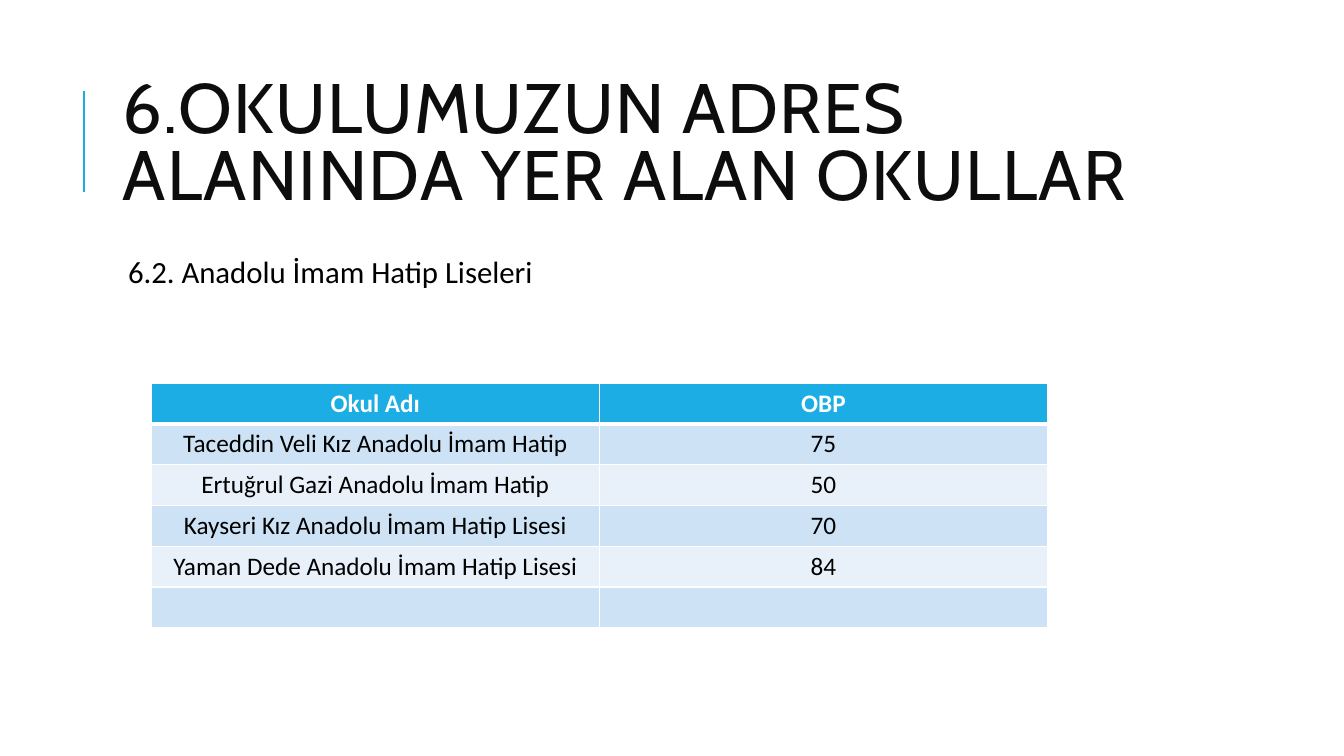
from lxml.etree import SubElement
from pptx import Presentation
from pptx.dml.color import RGBColor
from pptx.enum.shapes import MSO_CONNECTOR
from pptx.enum.text import MSO_ANCHOR, PP_ALIGN
from pptx.oxml.ns import qn
from pptx.util import Inches, Pt

COLORS = {
    "accent": "1CADE4",
    "title": "0D0D0D",
    "text": "000000",
    "white": "FFFFFF",
    "band_dark": "CDE3F5",
    "band_light": "E8F1FA",
}
SCHOOLS = [
    ("Okul Adı", "OBP"),
    ("Taceddin Veli Kız Anadolu İmam Hatip", "75"),
    ("Ertuğrul Gazi Anadolu İmam Hatip", "50"),
    ("Kayseri Kız Anadolu İmam Hatip Lisesi", "70"),
    ("Yaman Dede Anadolu İmam Hatip Lisesi", "84"),
    ("", ""),
]
TEXT_LEFT, TEXT_WIDTH = Inches(1.12), Inches(10.63)


def add_run(paragraph, text, font_name, size, color, bold=False):
    run = paragraph.add_run()
    run.text = text
    run.font.name = font_name
    run.font.size = Pt(size)
    run.font.bold = bold
    run.font.color.rgb = RGBColor.from_string(COLORS[color])
    return run


def add_border(cell, side, points):
    line = SubElement(cell._tc.get_or_add_tcPr(), qn(f"a:ln{side}"), w=str(Pt(points)))
    fill = SubElement(line, qn("a:solidFill"))
    SubElement(fill, qn("a:srgbClr"), val=COLORS["white"])


presentation = Presentation()
presentation.slide_width = Inches(13.33)
presentation.slide_height = Inches(7.5)
slide = presentation.slides.add_slide(presentation.slide_layouts[6])

# Accent line beside the title
accent_line = slide.shapes.add_connector(
    MSO_CONNECTOR.STRAIGHT, Inches(0.83), Inches(1.9), Inches(0.83), Inches(0.9))
accent_line.line.color.rgb = RGBColor.from_string(COLORS["accent"])
accent_line.line.width = Pt(1.5)
SubElement(accent_line._element.spPr, qn("a:effectLst"))

# Title
title = slide.shapes.add_textbox(TEXT_LEFT, Inches(0.64), TEXT_WIDTH, Inches(1.64))
title.text_frame.word_wrap = True
title.text_frame.vertical_anchor = MSO_ANCHOR.MIDDLE
paragraph = title.text_frame.paragraphs[0]
paragraph.line_spacing = 0.8
title_run = add_run(
    paragraph, "6.OKULUMUZUN ADRES ALANINDA YER ALAN OKULLAR", "Cabin", 50, "title")
title_run.font._element.set("spc", "100")

# Subheading
body = slide.shapes.add_textbox(TEXT_LEFT, Inches(2.5), TEXT_WIDTH, Inches(4.4))
frame = body.text_frame
frame.word_wrap = True
frame.margin_left = Inches(0.15)
frame.margin_right = frame.margin_top = frame.margin_bottom = Inches(0.05)
paragraph = frame.paragraphs[0]
paragraph.line_spacing = 0.9
paragraph.space_before = Pt(12)
paragraph.space_after = Pt(2)
add_run(paragraph, "6.2. Anadolu İmam Hatip Liseleri", "Calibri", 22, "text")

# School table: header row, then alternating bands
table = slide.shapes.add_table(
    len(SCHOOLS), 2, Inches(1.5), Inches(3.8), Inches(8.89), Inches(2.43)).table
for row_index, school in enumerate(SCHOOLS):
    is_header = row_index == 0
    band = "accent" if is_header else ("band_light", "band_dark")[row_index % 2]
    for column_index, text in enumerate(school):
        cell = table.cell(row_index, column_index)
        for side in "LRTB":
            header_edge = (is_header and side == "B") or (row_index == 1 and side == "T")
            add_border(cell, side, 3 if header_edge else 1)
        cell.fill.solid()
        cell.fill.fore_color.rgb = RGBColor.from_string(COLORS[band])
        paragraph = cell.text_frame.paragraphs[0]
        paragraph.alignment = PP_ALIGN.CENTER
        if text:
            add_run(paragraph, text, "Calibri", 18,
                    "white" if is_header else "text", is_header)

presentation.save("out.pptx")
